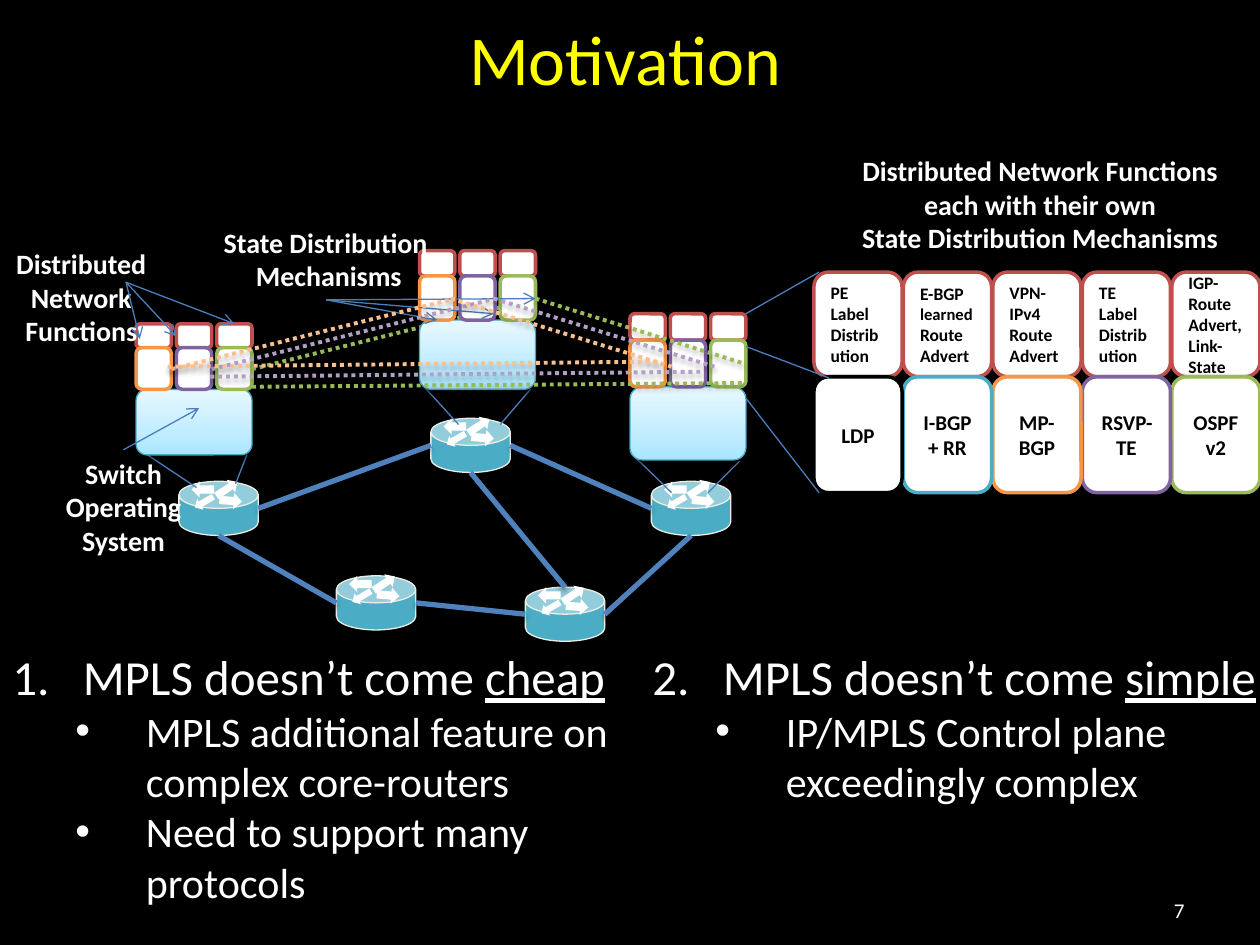
from copy import deepcopy
from pptx import Presentation
from pptx import util as u
from pptx.dml.color import RGBColor
from pptx.enum import dml, shapes, text
from pptx.oxml.ns import qn
from lxml import etree

BLACK = RGBColor(0, 0, 0)
WHITE = RGBColor(255, 255, 255)
YELLOW = RGBColor(255, 255, 0)
RED = RGBColor(0xC0, 0x50, 0x4D)
GREEN = RGBColor(0x9B, 0xBB, 0x59)
PURPLE = RGBColor(0x80, 0x64, 0xA2)
ORANGE = RGBColor(0xF7, 0x96, 0x46)
TEAL = RGBColor(0x4B, 0xAC, 0xC6)
LILAC = RGBColor(0xB3, 0xA2, 0xC7)
PEACH = RGBColor(0xFA, 0xC0, 0x90)
CREAM = RGBColor(0xEE, 0xEC, 0xE1)
LINK = RGBColor(0x4F, 0x81, 0xBD)
THIN = RGBColor(0x4B, 0x7E, 0xBC)
OS_LINE = RGBColor(0x46, 0xAA, 0xC5)
OS_DARK = RGBColor(0xA7, 0xE6, 0xFF)
OS_MID = RGBColor(0xC1, 0xED, 0xFF)
OS_LIGHT = RGBColor(0xE7, 0xF8, 0xFF)

ST = shapes.MSO_SHAPE
CENTER, LEFT, RIGHT = text.PP_ALIGN.CENTER, text.PP_ALIGN.LEFT, text.PP_ALIGN.RIGHT

ROUTER_W, ROUTER_H = 0.63, 0.43
ROUTERS = {"east": (5.17, 3.82), "southwest": (2.67, 4.57), "north": (3.42, 3.32),
           "southeast": (4.17, 4.66), "west": (1.42, 3.82)}
ROUTER_ARROWS = [(ST.DOWN_ARROW, 0.15, 0.08, 0.1, 0.17, 59.9),
                 (ST.DOWN_ARROW, 0.32, -0.04, 0.12, 0.2, 236.4),
                 (ST.RIGHT_ARROW, 0.1, 0, 0.18, 0.13, 180),
                 (ST.RIGHT_ARROW, 0.32, 0.09, 0.18, 0.13, 4.6)]
SIDES = {"left": (0, 0.5), "right": (1, 0.5), "top": (0.5, 0), "bottom": (0.5, 1)}
LINKS = [("west", "bottom", "southwest", "left"), ("west", "right", "north", "left"),
         ("southwest", "right", "southeast", "left"), ("north", "bottom", "southeast", "top"),
         ("north", "right", "east", "left"), ("east", "bottom", "southeast", "right")]

STACKS = [(5, 2.49, 0.21, 0.37, 0.58), (3.33, 1.99, 0.2, 0.35, 0.55),
          (1.08, 2.57, 0.19, 0.33, 0.52)]
FUNCTION_COLORS = [ORANGE, PURPLE, GREEN]
ZOOM_LINES = [(5.62, 3.91, 5.87, 3.66), (5.33, 3.91, 5, 3.59), (3.97, 3.37, 4.21, 3.09),
              (3.64, 3.37, 3.33, 3.03), (1.56, 3.87, 1.08, 3.55), (1.87, 3.84, 1.96, 3.61)]
TABLE_ZOOM = [(5.92, 3.16, 6.5, 3.91), (5.92, 2.49, 6.5, 2.16), (5.92, 2.75, 6.58, 3)]
POINTERS = [(2.59, 2.38, 3.92, 2.49), (2.59, 2.38, 3.47, 2.54), (2.59, 2.38, 4.25, 2.37),
            (0.98, 3.57, 1.58, 3.24), (1, 2.24, 1.11, 2.69), (1, 2.24, 1.4, 2.67),
            (1, 2.24, 1.86, 2.57)]
BACK_STATE = (2, 2.93, 4.25, 2.37)
STATE_LINES = [(GREEN, 2, 3.07, 5.92, 3.04), (GREEN, 4.25, 2.37, 5.92, 2.89),
               (LILAC, 1.68, 2.93, 3.93, 2.37), (PEACH, 1.36, 2.93, 3.61, 2.37),
               (LILAC, 3.92, 2.37, 5.67, 2.91), (PEACH, 3.58, 2.37, 5.33, 2.91),
               (LILAC, 1.67, 2.99, 5.58, 2.95), (PEACH, 1.33, 2.91, 5.25, 2.87)]

LABELS = [((1.66, 1.74, 1.85, 0.64), False, ["State Distribution", " Mechanisms"]),
          ((0.17, 3.57, 1.62, 0.91), True, ["Switch Operating System"]),
          ((0, 1.91, 1.29, 0.91), True, ["Distributed", "Network Functions"]),
          ((6.67, 1.17, 3.17, 0.91), True,
           ["Distributed Network Functions", "each with their own", "State Distribution Mechanisms"])]
PROTOCOLS = [([("IGP- Route Advert, Link-State", 10)], "OSPFv2", GREEN),
             ([("TE Label Distribution", 10)], "RSVP-TE", PURPLE),
             ([("VPN-IPv4 Route Advert", 10)], "MP-BGP", ORANGE),
             ([("E-BGP ", 10), ("learned ", 9.5), ("Route Advert", 10)], "I-BGP + RR", TEAL),
             ([("PE Label Distribution", 10)], "LDP", BLACK)]
POINTS = [((0, 5.08, 5.08, 2.19), "cheap", ["MPLS additional feature on complex core-routers",
                                            "Need to support many protocols"]),
          ((5.08, 5.08, 5.17, 1.78), "simple", ["IP/MPLS Control plane exceedingly complex"])]

prs = Presentation()
prs.slide_width, prs.slide_height = u.Inches(10), u.Inches(7.5)
s = prs.slides.add_slide(prs.slide_layouts[6])
s.background.fill.solid()
s.background.fill.fore_color.rgb = BLACK


def sub(parent, tag, **attrs):
    return etree.SubElement(parent, qn(tag), {k: str(v) for k, v in attrs.items()})


def add_shadow(sp):
    spPr = sp._element.spPr
    for old in spPr.findall(qn("a:effectLst")):
        spPr.remove(old)
    shadow = sub(sub(spPr, "a:effectLst"), "a:outerShdw", blurRad=u.Pt(3.1), dist=u.Pt(1.8),
                 dir=5400000, rotWithShape=0)
    sub(sub(shadow, "a:srgbClr", val="000000"), "a:alpha", val=35000)


def add_line(x1, y1, x2, y2, color=THIN, width=0.75, dotted=False, arrow=False, shadow=False):
    c = s.shapes.add_connector(shapes.MSO_CONNECTOR.STRAIGHT, *map(u.Inches, (x1, y1, x2, y2)))
    c.line.color.rgb = color
    c.line.width = u.Pt(width)
    if dotted:
        c.line.dash_style = dml.MSO_LINE.ROUND_DOT
    if arrow:
        sub(c.line._get_or_add_ln(), "a:tailEnd", type="arrow")
    if shadow:
        add_shadow(c)
    else:
        sub(c._element.spPr, "a:effectLst")


def add_box(kind, box, line=None, width=2, fill=WHITE):
    sp = s.shapes.add_shape(kind, *map(u.Inches, box))
    sp.shadow.inherit = False
    sp.fill.solid()
    sp.fill.fore_color.rgb = fill
    if line is None:
        sp.line.fill.background()
    else:
        sp.line.color.rgb = line
        sp.line.width = u.Pt(width)
    return sp


def add_run(p, words, size, color=WHITE, bold=False):
    r = p.add_run()
    r.text = words
    r.font.name, r.font.size, r.font.bold = "Calibri", u.Pt(size), bold
    r.font.color.rgb = color
    return r


def add_text(box, lines, size, align=CENTER, color=WHITE, bold=False, wrap=True):
    tf = s.shapes.add_textbox(*map(u.Inches, box)).text_frame
    tf.word_wrap = wrap
    for i, line in enumerate(lines):
        p = tf.add_paragraph() if i else tf.paragraphs[0]
        p.alignment = align
        add_run(p, line, size, color, bold)
    return tf


def fill_cell(sp, runs, align):
    tf = sp.text_frame
    tf.word_wrap = True
    tf.vertical_anchor = text.MSO_ANCHOR.MIDDLE
    tf.paragraphs[0].alignment = align
    for words, size in runs:
        add_run(tf.paragraphs[0], words, size, BLACK, True)


def add_os(box):
    sp = add_box(ST.ROUNDED_RECTANGLE, box, OS_LINE, 0.75)
    sp.fill.gradient()
    sp.fill.gradient_angle = 90
    first = sp.fill.gradient_stops[0]._gs
    first.addnext(deepcopy(first))
    for stop, color, pos in zip(sp.fill.gradient_stops, (OS_DARK, OS_MID, OS_LIGHT), (0, 0.35, 1)):
        stop.color.rgb = color
        stop.position = pos
    add_shadow(sp)


def side_point(router, side):
    (x, y), (fx, fy) = ROUTERS[router], SIDES[side]
    return x + fx * ROUTER_W, y + fy * ROUTER_H


def indent(p, margin, hanging):
    pPr = p._p.get_or_add_pPr()
    pPr.set("marL", str(u.Inches(margin)))
    pPr.set("indent", str(-u.Inches(hanging)))
    return pPr


add_line(*BACK_STATE, color=GREEN, width=2.25, dotted=True, shadow=True)
for x, y in ROUTERS.values():
    can = add_box(ST.CAN, (x, y, ROUTER_W, ROUTER_H), CREAM, 0.75, TEAL)
    can.adjustments[0] = 0.5
    add_shadow(can)
    for kind, dx, dy, w, h, turn in ROUTER_ARROWS:
        add_box(kind, (x + dx, y + dy, w, h)).rotation = turn
for a, a_side, b, b_side in LINKS:
    add_line(*side_point(a, a_side), *side_point(b, b_side), color=LINK, width=3, shadow=True)

for ends in ZOOM_LINES:
    add_line(*ends)
for x, y, top_h, mid_h, os_h in STACKS:
    add_os((x, y + top_h + mid_h, 0.92, os_h))
    for i, color in enumerate(FUNCTION_COLORS):
        left = x + 0.32 * i
        add_box(ST.ROUNDED_RECTANGLE, (left, y, 0.28, top_h), RED)
        add_box(ST.ROUNDED_RECTANGLE, (left, y + top_h, 0.28, mid_h), color)

for box, wrap, lines in LABELS:
    add_text(box, lines, 16, bold=True, wrap=wrap)
for ends in POINTERS:
    add_line(*ends, arrow=True)
for color, *ends in STATE_LINES:
    add_line(*ends, color=color, width=2.25, dotted=True, shadow=True)

for i, (function, protocol, color) in enumerate(PROTOCOLS):
    left = 9.3 - 0.71 * i
    fill_cell(add_box(ST.ROUNDED_RECTANGLE, (left, 2.16, 0.7, 0.83), RED), function, LEFT)
    fill_cell(add_box(ST.ROUNDED_RECTANGLE, (left, 2.99, 0.7, 0.92), color), [(protocol, 12)], CENTER)
for ends in TABLE_ZOOM:
    add_line(*ends)

add_text((0.25, 0.07, 9.42, 0.75), ["Motivation"], 40, color=YELLOW)
number = add_text((7.17, 7.02, 2.33, 0.4), ["7"], 12, RIGHT)
number.vertical_anchor = text.MSO_ANCHOR.MIDDLE
for start, (box, key_word, details) in enumerate(POINTS, 1):
    tf = add_text(box, ["MPLS doesn’t come "], 28, LEFT)
    p = tf.paragraphs[0]
    add_run(p, key_word, 28).font.underline = True
    sub(indent(p, 0.56, 0.56), "a:buAutoNum", type="arabicPeriod", startAt=start)
    for detail in details:
        p = tf.add_paragraph()
        p.level = 1
        add_run(p, detail, 24)
        pPr = indent(p, 1.06, 0.56)
        sub(pPr, "a:buFont", typeface="Arial")
        sub(pPr, "a:buChar", char="•")

prs.save("out.pptx")
